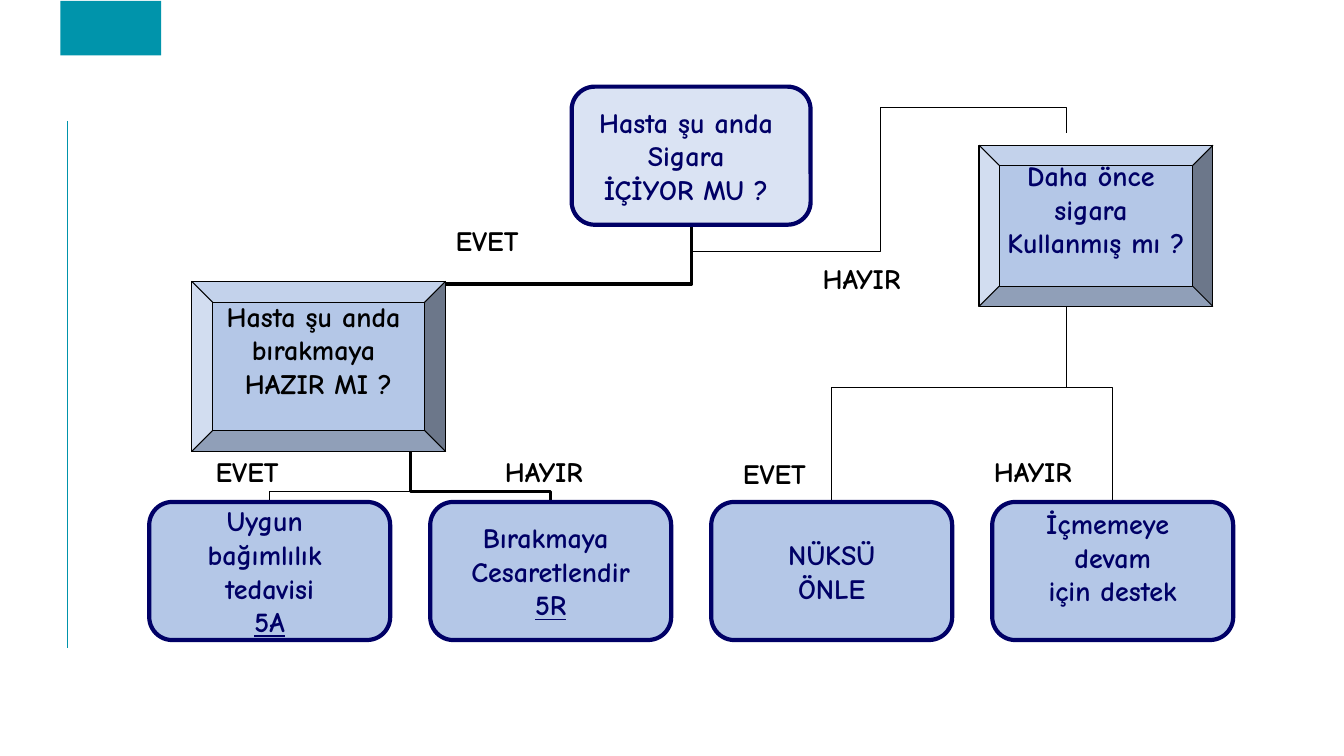
import pptx
import pptx.util
import pptx.dml.color
import pptx.enum.shapes
import pptx.enum.text
import pptx.oxml
import pptx.oxml.ns
import lxml.etree

Inches = pptx.util.Inches
Pt = pptx.util.Pt
RGBColor = pptx.dml.color.RGBColor
SHAPE = pptx.enum.shapes.MSO_SHAPE
CONNECTOR = pptx.enum.shapes.MSO_CONNECTOR
ALIGN = pptx.enum.text.PP_ALIGN
qn = pptx.oxml.ns.qn

TEAL = RGBColor(0x00, 0x94, 0xAB)
NAVY = RGBColor(0x00, 0x00, 0x66)
BLACK = RGBColor(0x00, 0x00, 0x00)
PALE = RGBColor(0xDA, 0xE3, 0xF3)
BLUE = RGBColor(0xB4, 0xC7, 0xE7)
FONT = "Comic Neue"

# Four outcome columns, evenly spaced
COL_LEFT, COL_STEP, BOX_W, BOX_H = 1.48, 2.787, 2.39, 1.37
OUTCOME_TOP = 4.98
col_mid = [COL_LEFT + BOX_W / 2 + i * COL_STEP for i in range(4)]
START_X, READY_X, BEFORE_X = 6.86, 4.07, 10.58

prs = pptx.Presentation()
prs.slide_width, prs.slide_height = Inches(13.33), Inches(7.5)
s = prs.slides.add_slide(prs.slide_layouts[6])


def write(tf, text, color, align):
    tf.text = text
    for p in tf.paragraphs:
        p.alignment = align
        for r in p.runs:
            r.font.name, r.font.size, r.font.bold = FONT, Pt(20), True
            r.font.color.rgb = color
            r.font.underline = True if r.text in ("5A", "5R") else None


def connect(kind, x1, y1, x2, y2, color, width, preset=None, adjusts=()):
    """Add a line; one with a preset is turned to leave its lower start upwards."""
    if preset:
        mid_x, mid_y = (x1 + x2) / 2, (y1 + y2) / 2
        rise, run = y1 - y2, x2 - x1
        x1, x2 = mid_x - rise / 2, mid_x + rise / 2
        y1, y2 = mid_y - run / 2, mid_y + run / 2
    c = s.shapes.add_connector(kind, Inches(x1), Inches(y1), Inches(x2), Inches(y2))
    c.line.color.rgb, c.line.width = color, Pt(width)
    spPr = c._element.spPr
    lxml.etree.SubElement(spPr, qn("a:effectLst"))
    if preset:
        spPr.find(qn("a:xfrm")).set("rot", str(270 * 60000))
        geom = spPr.find(qn("a:prstGeom"))
        geom.set("prst", preset)
        av = geom.find(qn("a:avLst"))
        if av is None:
            av = lxml.etree.SubElement(geom, qn("a:avLst"))
        for i, share in enumerate(adjusts, 1):
            gd = lxml.etree.SubElement(av, qn("a:gd"))
            gd.set("name", f"adj{i}")
            gd.set("fmla", f"val {round(share * 100000)}")


# Side rule and corner block
connect(CONNECTOR.STRAIGHT, 0.67, 1.2, 0.67, 6.43, TEAL, 1)
sp = s.shapes.add_shape(SHAPE.RECTANGLE, Inches(0.6), Inches(0.01), Inches(1), Inches(0.54))
sp.shadow.inherit = False
sp.fill.solid()
sp.fill.fore_color.rgb = TEAL
sp.line.fill.background()

# Branches, each from its lower end to its upper end
branches = [
    (col_mid[3], 4.98, BEFORE_X, 2.7, 0.5, "bentConnector3", [0.5]),
    (col_mid[2], 4.98, BEFORE_X, 2.7, 0.5, "bentConnector3", [0.5]),
    (col_mid[1], 4.97, READY_X, 4.31, 2.25, "bentConnector3", [0.14]),
    (col_mid[0], 4.97, READY_X, 4.31, 0.5, "bentConnector3", [0.14]),
    (START_X, 2.24, BEFORE_X, 1.32, 0.5, "bentConnector5", [-0.274, 0.502, 1.274]),
    (READY_X, 2.91, START_X, 2.25, 2.25, "bentConnector3", [0.14]),
]
for x1, y1, x2, y2, width, preset, adjusts in branches:
    connect(CONNECTOR.ELBOW, x1, y1, x2, y2, BLACK, width, preset, adjusts)

# Question and outcome boxes: shape, left, top, width, height, fill, line,
# line width, text colour, inset, extra bottom inset, text
ROUND, BEVEL = SHAPE.ROUNDED_RECTANGLE, SHAPE.BEVEL
boxes = [
    (ROUND, 5.67, 0.86, 2.37, BOX_H, PALE, NAVY, 3, NAVY, 0, 0,
     "Hasta şu anda \nSigara \nİÇİYOR MU ? "),
    (BEVEL, 1.9, 2.79, 2.52, 1.69, BLUE, BLACK, 0.75, BLACK, 0.05, 0.33,
     "Hasta şu anda \nbırakmaya \nHAZIR MI ?"),
    (BEVEL, 9.71, 1.44, 2.32, 1.6, BLUE, BLACK, 0.75, NAVY, 0.05, 0.33,
     "Daha önce \nsigara \nKullanmış mı ?"),
]
outcomes = [
    ("Uygun \nbağımlılık \ntedavisi\n5A", 0),
    ("Bırakmaya \nCesaretlendir\n5R", 0),
    ("NÜKSÜ\nÖNLE", 0),
    ("İçmemeye \ndevam\niçin destek", 0.28),
]
for i, (text, extra) in enumerate(outcomes):
    boxes.append((ROUND, COL_LEFT + i * COL_STEP, OUTCOME_TOP, BOX_W, BOX_H,
                  BLUE, NAVY, 3, NAVY, 0, extra, text))

for kind, x, y, w, h, fill, line, weight, color, inset, extra, text in boxes:
    sp = s.shapes.add_shape(kind, Inches(x), Inches(y), Inches(w), Inches(h))
    sp.shadow.inherit = False
    sp.fill.solid()
    sp.fill.fore_color.rgb = fill
    sp.line.color.rgb, sp.line.width = line, Pt(weight)
    tf = sp.text_frame
    tf.word_wrap = False
    tf.vertical_anchor = pptx.enum.text.MSO_ANCHOR.MIDDLE
    tf.margin_left = tf.margin_right = Inches(inset * 2)
    tf.margin_top, tf.margin_bottom = Inches(inset), Inches(inset + extra)
    write(tf, text, color, ALIGN.CENTER)

# Branch answers
answers = [
    ("EVET", 4.42, 2.17, 1.17), ("HAYIR", 8.06, 2.55, 1.49),
    ("EVET", 2.04, 4.46, 1.3), ("HAYIR", 4.91, 4.46, 1.39),
    ("EVET", 7.27, 4.48, 1.2), ("HAYIR", 9.76, 4.46, 1.33),
]
for text, x, y, w in answers:
    tf = s.shapes.add_textbox(Inches(x), Inches(y), Inches(w), Inches(0.44)).text_frame
    tf.word_wrap = True
    write(tf, text, BLACK, ALIGN.LEFT)

prs.save("out.pptx")
